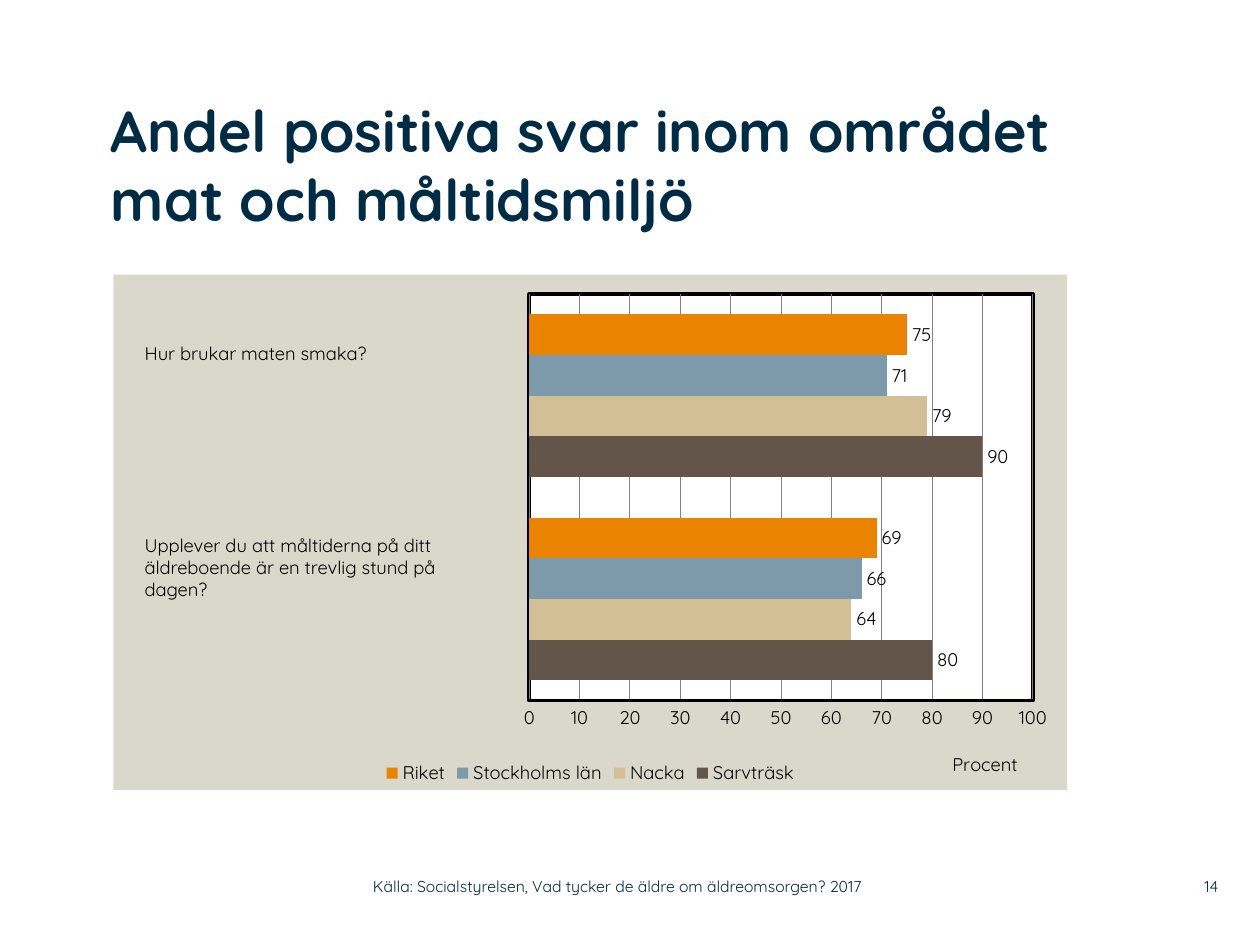
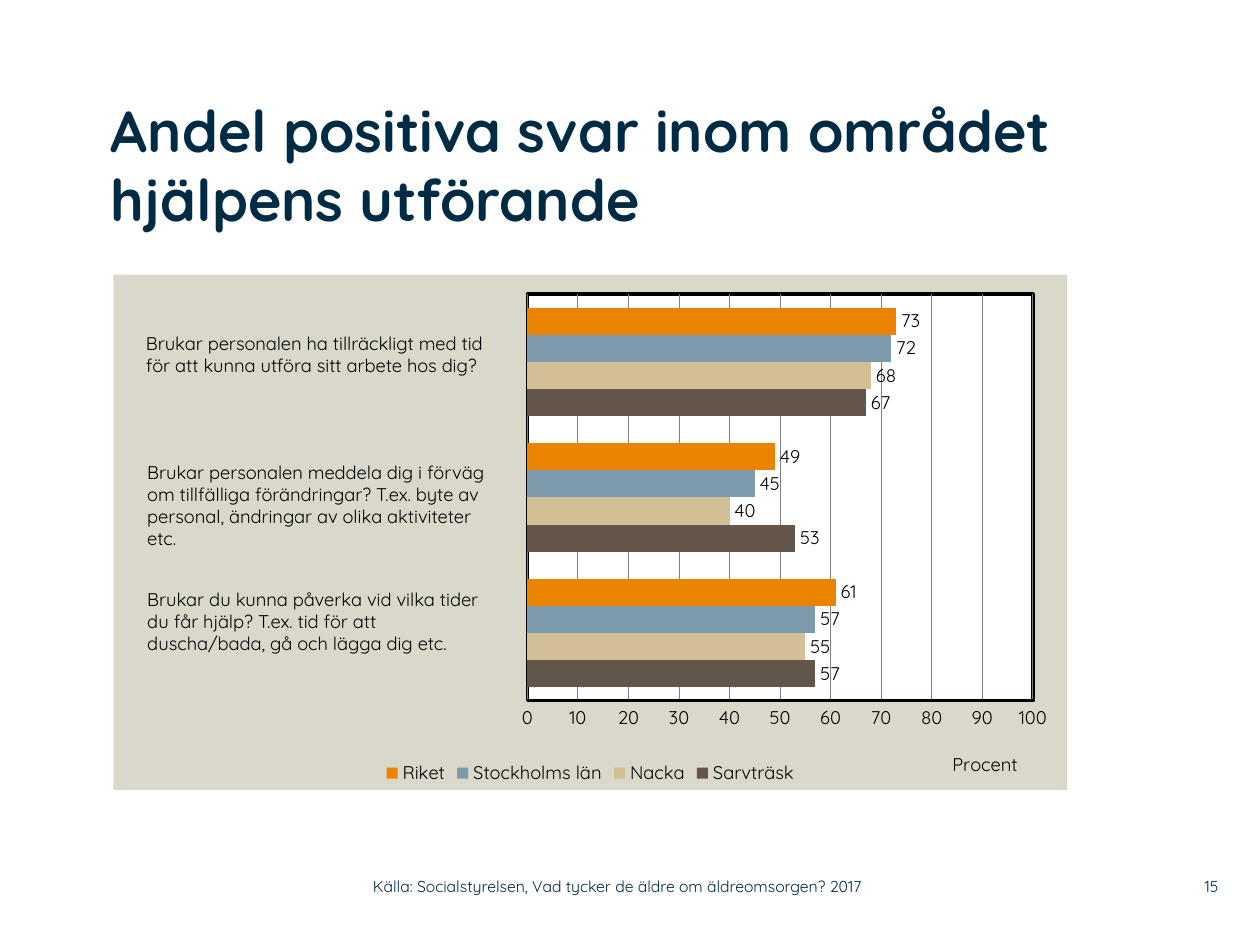
import pptx
import pptx.chart.data
import pptx.dml.color
import pptx.enum.chart
import pptx.enum.text
import pptx.oxml
import pptx.oxml.ns
import pptx.util

# Content: one dict per slide; series values run from the bottom question up
SOURCE = "Källa: Socialstyrelsen, Vad tycker de äldre om äldreomsorgen? 2017"
AXIS_TITLE = "Procent"
SLIDES = [
    {
        "number": 14,
        "title": "Andel positiva svar inom området mat och måltidsmiljö",
        "plot": (0.436, 0.528),
        "series": {
            "Sarvträsk": (80, 90),
            "Nacka": (64, 79),
            "Stockholms län": (66, 71),
            "Riket": (69, 75),
        },
        "questions": [
            (10.5, 26.7, 2.8, ["Hur brukar maten smaka?"]),
            (10.5, 41.9, 6.3, [
                "Upplever du att måltiderna på ditt äldreboende är en trevlig stund på",
                "dagen?",
            ]),
        ],
    },
    {
        "number": 15,
        "title": "Andel positiva svar inom området hjälpens utförande",
        "plot": (0.434, 0.53),
        "series": {
            "Sarvträsk": (57, 53, 67),
            "Nacka": (55, 40, 68),
            "Stockholms län": (57, 45, 72),
            "Riket": (61, 49, 73),
        },
        "questions": [
            (10.6, 25.9, 4.5, [
                "Brukar personalen ha tillräckligt med tid",
                "för att kunna utföra sitt arbete hos dig?",
            ]),
            (10.7, 36.1, 8.1, [
                "Brukar personalen meddela dig i förväg om tillfälliga förändringar? "
                "T.ex. byte av personal, ändringar av olika aktiviteter etc.",
            ]),
            (10.7, 46.2, 6.3, [
                "Brukar du kunna påverka vid vilka tider",
                "du får hjälp? T.ex. tid för att",
                "duscha/bada, gå och lägga dig etc.",
            ]),
        ],
    },
]

# Colours and text formats
NAVY = pptx.dml.color.RGBColor(0x00, 0x2B, 0x45)
BLACK = pptx.dml.color.RGBColor(0x00, 0x00, 0x00)
WHITE = pptx.dml.color.RGBColor(0xFF, 0xFF, 0xFF)
GREY = pptx.dml.color.RGBColor(0x80, 0x80, 0x80)
PANEL = pptx.dml.color.RGBColor(0xDA, 0xD7, 0xCB)
SERIES_COLOURS = {
    "Sarvträsk": pptx.dml.color.RGBColor(0x63, 0x55, 0x49),
    "Nacka": pptx.dml.color.RGBColor(0xD3, 0xBF, 0x96),
    "Stockholms län": pptx.dml.color.RGBColor(0x7D, 0x9A, 0xAA),
    "Riket": pptx.dml.color.RGBColor(0xE9, 0x83, 0x00),
}
FONT = "Quicksand"
TITLE_FONT = {"name": FONT, "size": pptx.util.Pt(33), "bold": True}
BODY_FONT = {"name": FONT, "size": pptx.util.Pt(10.5), "bold": False}
FOOTER_FONT = {"name": FONT, "size": pptx.util.Pt(9), "bold": False}

MIDDLE = pptx.enum.text.MSO_ANCHOR.MIDDLE
RIGHT = pptx.enum.text.PP_ALIGN.RIGHT
NO_INSETS = dict.fromkeys(("margin_left", "margin_top", "margin_right", "margin_bottom"), 0)
FOOTER_FRAME = {**NO_INSETS, "vertical_anchor": MIDDLE}

# Grid of 100 columns by 75 rows; boxes are left, top, width, height
SLIDE_WIDTH, SLIDE_HEIGHT = pptx.util.Inches(10), pptx.util.Inches(7.5)
COLUMN, ROW = SLIDE_WIDTH / 100, SLIDE_HEIGHT / 75
TITLE_BOX = (8.8, 7.5, 76, 14.2)
CHART_BOX = (9, 21.8, 75.7, 40.9)
SOURCE_BOX = (29.6, 68.9, 44.3, 2.9)
NUMBER_BOX = (92, 68.9, 4.7, 2.9)
QUESTION_WIDTH = 29.8
# Shares of the chart's size
PLOT_TOP, PLOT_HEIGHT = 0.038, 0.789
AXIS_TITLE_AT = (0.876, 0.917)


def place(box):
    left, top, width, height = box
    return [round(v) for v in (left * COLUMN, top * ROW, width * COLUMN, height * ROW)]


def set_format(target, values):
    for name, value in values.items():
        setattr(target, name, value)


def add_text(slide, box, lines, font, colour, frame_format=None, alignment=None):
    frame = slide.shapes.add_textbox(*place(box)).text_frame
    set_format(frame, {"word_wrap": True, **(frame_format or {})})
    frame.text = "\n".join(lines)
    for paragraph in frame.paragraphs:
        paragraph.alignment = alignment
        set_format(paragraph.font, font)
        paragraph.font.color.rgb = colour


# Chart parts that need XML
def chart_xml(body):
    return pptx.oxml.parse_xml(body.replace(">", f' {pptx.oxml.ns.nsdecls("c", "a")}>', 1))


def set_layout(parent, index, places, inner=False):
    for old in parent.findall(pptx.oxml.ns.qn("c:layout")):
        parent.remove(old)
    modes = '<c:layoutTarget val="inner"/>' if inner else ""
    modes += '<c:xMode val="edge"/><c:yMode val="edge"/>'
    values = "".join(f'<c:{name} val="{value}"/>' for name, value in zip("xywh", places))
    parent.insert(index, chart_xml(
        f"<c:layout><c:manualLayout>{modes}{values}</c:manualLayout></c:layout>"))


def area_format(fill, line=None):
    def solid(colour):
        return f'<a:solidFill><a:srgbClr val="{colour}"/></a:solidFill>'

    outline = f'<a:ln w="{pptx.util.Pt(2)}">{solid(line)}</a:ln>' if line else "<a:ln><a:noFill/></a:ln>"
    return chart_xml(f"<c:spPr>{solid(fill)}{outline}</c:spPr>")


def add_chart(slide, content):
    data = pptx.chart.data.CategoryChartData()
    question_count = len(content["questions"])
    data.categories = [str(i + 1) for i in range(question_count)]
    for name, values in content["series"].items():
        data.add_series(name, values)
    kind = pptx.enum.chart.XL_CHART_TYPE.BAR_CLUSTERED
    chart = slide.shapes.add_chart(kind, *place(CHART_BOX), data).chart
    set_format(chart, {"has_title": False, "has_legend": True})
    set_format(chart.font, BODY_FONT)
    chart.font.color.rgb = BLACK

    # Bars and value labels
    plot = chart.plots[0]
    set_format(plot, {"gap_width": 100, "overlap": 0,
                      "vary_by_categories": False, "has_data_labels": True})
    set_format(plot.data_labels, {
        "show_value": True, "position": pptx.enum.chart.XL_LABEL_POSITION.OUTSIDE_END})
    for series in plot.series:
        series.format.fill.solid()
        series.format.fill.fore_color.rgb = SERIES_COLOURS[series.name]

    # Axes
    chart.category_axis.visible = False
    axis = chart.value_axis
    no_tick = pptx.enum.chart.XL_TICK_MARK.NONE
    set_format(axis, {"minimum_scale": 0, "maximum_scale": 100, "major_unit": 10,
                      "major_tick_mark": no_tick, "minor_tick_mark": no_tick,
                      "has_major_gridlines": True, "has_title": True})
    for line, colour, width in ((axis.format.line, BLACK, 2),
                                (axis.major_gridlines.format.line, GREY, 0.5)):
        line.color.rgb = colour
        line.width = pptx.util.Pt(width)
    title_frame = axis.axis_title.text_frame
    title_frame.text = AXIS_TITLE
    title_font = title_frame.paragraphs[0].runs[0].font
    set_format(title_font, BODY_FONT)
    title_font.color.rgb = BLACK

    # Legend
    set_format(chart.legend, {"position": pptx.enum.chart.XL_LEGEND_POSITION.BOTTOM,
                              "include_in_layout": False})
    set_format(chart.legend.font, BODY_FONT)

    # Panel, plot area and their places
    chart_part = chart.element.find(pptx.oxml.ns.qn("c:chart"))
    plot_area = chart_part.find(pptx.oxml.ns.qn("c:plotArea"))
    plot_left, plot_width = content["plot"]
    set_layout(plot_area, 0, (plot_left, PLOT_TOP, plot_width, PLOT_HEIGHT), inner=True)
    set_layout(axis.axis_title.element, 1, AXIS_TITLE_AT)
    plot_area.append(area_format(WHITE, BLACK))
    chart_part.addnext(area_format(PANEL))


def build_slide(presentation, content):
    slide = presentation.slides.add_slide(presentation.slide_layouts[6])
    add_chart(slide, content)
    add_text(slide, TITLE_BOX, [content["title"]], TITLE_FONT, NAVY, NO_INSETS)
    for left, top, height, lines in content["questions"]:
        add_text(slide, (left, top, QUESTION_WIDTH, height), lines, BODY_FONT, BLACK)
    add_text(slide, NUMBER_BOX, [str(content["number"])], FOOTER_FONT, NAVY, FOOTER_FRAME, RIGHT)
    add_text(slide, SOURCE_BOX, [SOURCE], FOOTER_FONT, NAVY, FOOTER_FRAME)


def main():
    presentation = pptx.Presentation()
    set_format(presentation, {"slide_width": SLIDE_WIDTH, "slide_height": SLIDE_HEIGHT})
    for content in SLIDES:
        build_slide(presentation, content)
    presentation.save("out.pptx")


if __name__ == "__main__":
    main()
